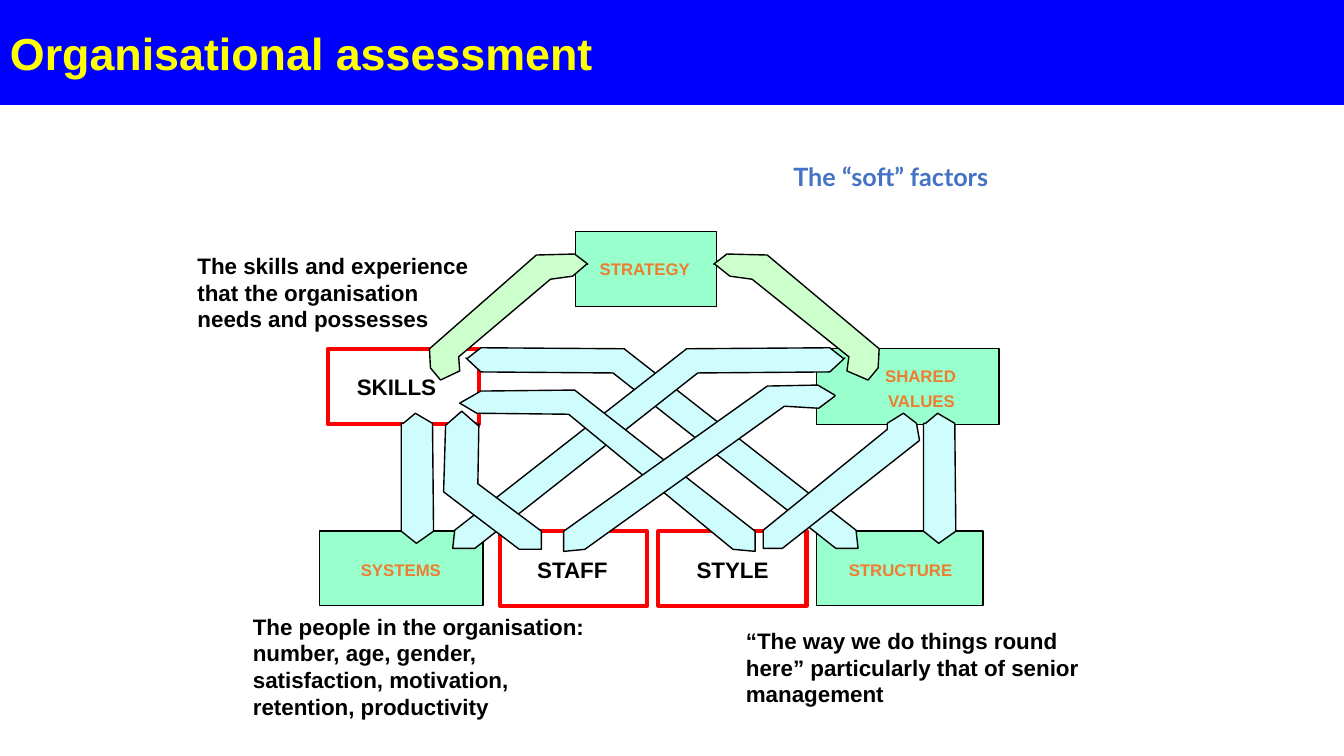
from pptx import Presentation
from pptx.dml.color import RGBColor
from pptx.enum.shapes import MSO_SHAPE as Preset
from pptx.enum.text import MSO_ANCHOR as Anchor, MSO_AUTO_SIZE as AutoSize, PP_ALIGN as Align
from pptx.util import Inches, Pt

CELL = Inches(0.01)
COLUMNS, ROWS = 1333, 750

BLACK = RGBColor(0x00, 0x00, 0x00)
WHITE = RGBColor(0xFF, 0xFF, 0xFF)
RED = RGBColor(0xFF, 0x00, 0x00)
BLUE = RGBColor(0x00, 0x00, 0xFF)
YELLOW = RGBColor(0xFF, 0xFF, 0x00)
MINT = RGBColor(0x99, 0xFF, 0xCC)
PALE_GREEN = RGBColor(0xCC, 0xFF, 0xCC)
PALE_CYAN = RGBColor(0xCF, 0xFD, 0xFD)
ORANGE = RGBColor(0xED, 0x7D, 0x31)
STEEL = RGBColor(0x44, 0x72, 0xC4)

deck = Presentation()
deck.slide_width, deck.slide_height = CELL * COLUMNS, CELL * ROWS
slide = deck.slides.add_slide(deck.slide_layouts[6])
shapes = slide.shapes


def paint(shape, fill, line=None, weight=1):
    shape.shadow.inherit = False
    shape.fill.solid()
    shape.fill.fore_color.rgb = fill
    if line is None:
        shape.line.fill.background()
    else:
        shape.line.color.rgb = line
        shape.line.width = Pt(weight)


def write(frame, text, size, color, font="Arial", wrap=True):
    frame.word_wrap = wrap
    frame.text = text
    for paragraph in frame.paragraphs:
        paragraph.alignment = Align.LEFT
        paragraph.font.name = font
        paragraph.font.size = Pt(size)
        paragraph.font.bold = True
        paragraph.font.color.rgb = color


TOP, MIDDLE, BOTTOM = 230, 346, 527
hard_factors = [(571, TOP, 140, 74), (810, MIDDLE, 181, 75),
                (317, BOTTOM, 162, 74), (810, BOTTOM, 165, 74)]
soft_factors = [(325, MIDDLE, 150, 75), (496, BOTTOM, 146, 74), (653, BOTTOM, 147, 74)]
for factors, fill, line, weight in [(hard_factors, MINT, BLACK, 1), (soft_factors, WHITE, RED, 3)]:
    for place in factors:
        paint(shapes.add_shape(Preset.RECTANGLE, *(CELL * n for n in place)), fill, line, weight)

skills_strategy = [(583, 262), (570, 252), (532, 253), (426, 346), (427, 365), (437, 377),
                   (456, 368), (455, 354), (546, 277), (568, 274), (582, 262)]
strategy_values = [(708, 262), (721, 252), (761, 253), (872, 346), (871, 365), (861, 377),
                   (840, 368), (842, 354), (746, 277), (724, 274), (709, 262)]
skills_structure = [(463, 356), (477, 345), (619, 346), (849, 526), (851, 544),
                    (829, 544), (608, 370), (477, 369), (462, 355)]
systems_values = [(1300 - x, y) for x, y in skills_structure]
skills_style = [(456, 400), (477, 388), (570, 387), (749, 527), (749, 547),
                (727, 545), (564, 411), (473, 410)]
staff_values = [(828, 392), (811, 382), (761, 383), (559, 527), (559, 547),
                (580, 545), (778, 403), (812, 405), (828, 393)]
skills_systems = [(400, 420), (412, 410), (429, 420), (430, 527), (413, 539),
                  (398, 527), (398, 420)]
values_structure = [(x + 518, y) for x, y in skills_systems]
skills_staff = [(474, 422), (458, 408), (442, 422), (440, 488), (515, 545), (537, 545),
                (537, 527), (474, 480), (475, 420)]
style_values = [(909, 420), (896, 410), (880, 420), (880, 426), (757, 526), (757, 544),
                (776, 544), (912, 437)]
green_links = [skills_strategy, strategy_values]
cyan_links = [skills_structure, systems_values, skills_style, staff_values, skills_systems,
              values_structure, skills_staff, style_values]
for links, fill in [(green_links, PALE_GREEN), (cyan_links, PALE_CYAN)]:
    for start, *rest in links:
        outline = shapes.build_freeform(*start, scale=CELL)
        outline.add_line_segments(rest, close=True)
        paint(outline.convert_to_shape(), fill, BLACK)

hard_label, soft_label, note = (12, ORANGE, "Arial", False), (16, BLACK, "Arial", False), (16, BLACK)
texts = [
    (585, 252, 110, 30, "STRATEGY", hard_label),
    (344, 365, 99, 36, "SKILLS", soft_label),
    (868, 358, 91, 30, "SHARED", hard_label),
    (871, 383, 87, 30, "VALUES", hard_label),
    (523, 547, 95, 36, "STAFF", soft_label),
    (348, 550, 100, 30, "SYSTEMS", hard_label),
    (681, 547, 95, 36, "STYLE", soft_label),
    (832, 550, 124, 30, "STRUCTURE", hard_label),
    (777, 155, 243, 40, "The “soft” factors", (18, STEEL, "Lato")),
    (186, 245, 291, 90,
     "The skills and experience that the organisation needs and possesses", note),
    (241, 603, 370, 117,
     "The people in the organisation: number, age, gender, satisfaction, motivation, "
     "retention, productivity", note),
    (730, 617, 374, 90,
     "“The way we do things round here” particularly that of senior\nmanagement", note),
]
for *place, text, style in texts:
    frame = shapes.add_textbox(*(CELL * n for n in place)).text_frame
    write(frame, text, *style)
    frame.auto_size = AutoSize.SHAPE_TO_FIT_TEXT

banner = shapes.add_shape(Preset.RECTANGLE, 0, 0, CELL * COLUMNS, CELL * 104)
paint(banner, BLUE)
write(banner.text_frame, "Organisational assessment", 32, YELLOW)
banner.text_frame.vertical_anchor = Anchor.MIDDLE

deck.save("out.pptx")
